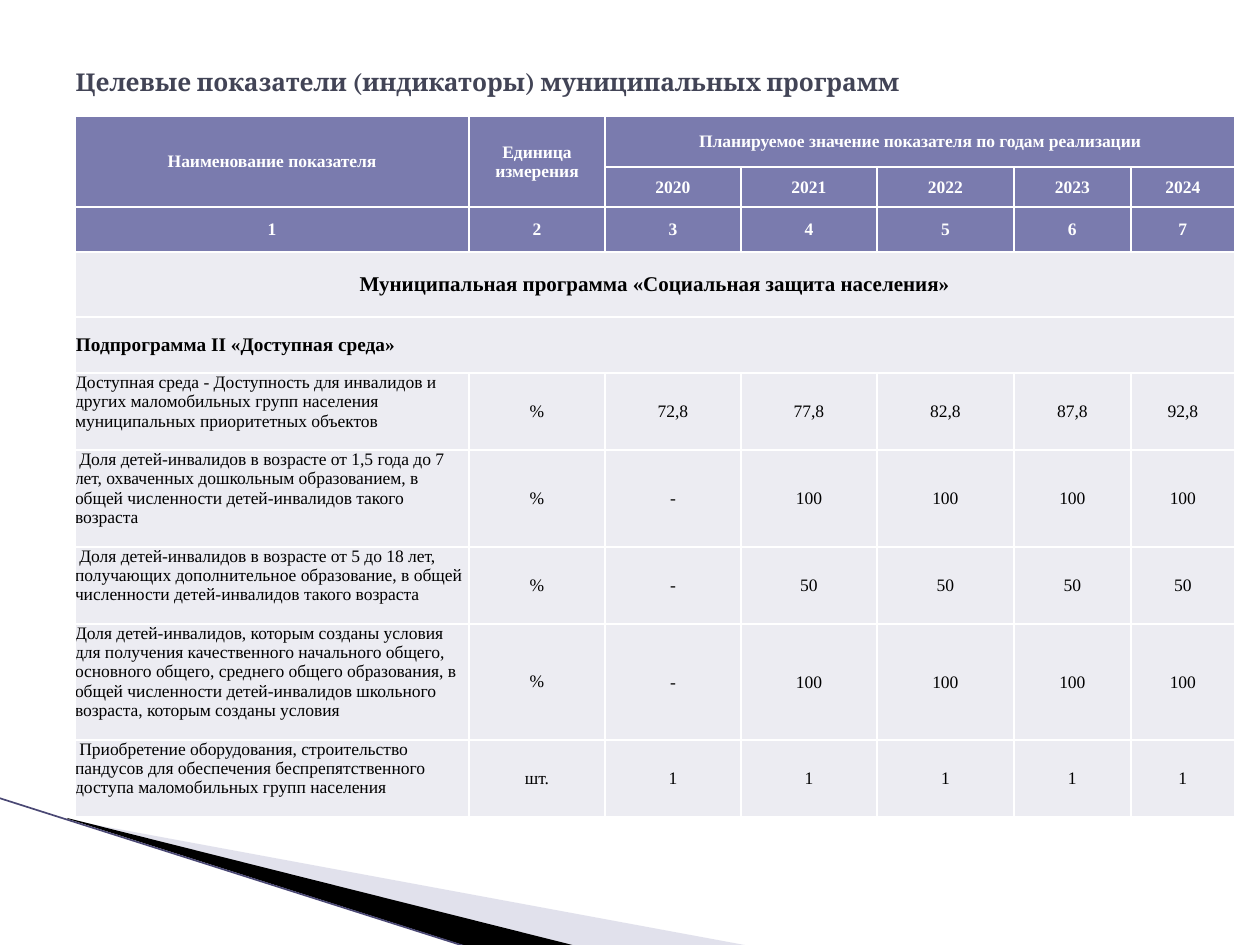
from lxml.etree import SubElement
from pptx import Presentation
from pptx.dml.color import RGBColor
from pptx.enum.shapes import MSO_CONNECTOR
from pptx.enum.text import MSO_ANCHOR, PP_ALIGN
from pptx.oxml import parse_xml
from pptx.oxml.ns import nsdecls, qn
from pptx.util import Pt

PX = 914400 // 126  # EMU in one px

WHITE = RGBColor(0xFF, 0xFF, 0xFF)
BLACK = RGBColor(0x00, 0x00, 0x00)
TITLE_COLOR = RGBColor(0x42, 0x44, 0x56)
HEADER_FILL = RGBColor(0x7A, 0x7B, 0xAE)
BODY_FILL = RGBColor(0xEC, 0xEC, 0xF2)
WEDGE_FILL = RGBColor(0xB6, 0xB6, 0xD1)
EDGE_COLOR = RGBColor(0x4A, 0x48, 0x74)

HEADER_ROWS = 3
SECTION_ROWS = 2
COLUMN_WIDTHS = [394, 136, 136, 136, 137, 117, 104]
ROW_HEIGHTS = [51, 40, 45, 65, 56, 77, 97, 77, 116, 77]
# Merged areas: first row, first column, last row, last column
MERGES = [(0, 0, 1, 0), (0, 1, 1, 1), (0, 2, 0, 6), (3, 0, 3, 6), (4, 0, 4, 6)]

ROWS = [
    ["Наименование показателя", "Единица измерения",
     "Планируемое значение показателя по годам реализации"],
    ["", "", "2020", "2021", "2022", "2023", "2024"],
    ["1", "2", "3", "4", "5", "6", "7"],
    ["Муниципальная программа «Социальная защита населения»"],
    ["Подпрограмма II «Доступная среда»"],
    ["Доступная среда - Доступность для инвалидов и других маломобильных групп "
     "населения муниципальных приоритетных объектов",
     "%", "72,8", "77,8", "82,8", "87,8", "92,8"],
    [" Доля детей-инвалидов в возрасте от 1,5 года до 7 лет, охваченных дошкольным "
     "образованием, в общей численности детей-инвалидов такого возраста",
     "%", "-", "100", "100", "100", "100"],
    [" Доля детей-инвалидов в возрасте от 5 до 18 лет, получающих дополнительное "
     "образование, в общей численности детей-инвалидов такого возраста",
     "%", "-", "50", "50", "50", "50"],
    ["Доля детей-инвалидов, которым созданы условия для получения качественного "
     "начального общего, основного общего, среднего общего образования, в общей "
     "численности детей-инвалидов школьного возраста, которым созданы условия",
     "%", "-", "100", "100", "100", "100"],
    [" Приобретение оборудования, строительство пандусов для обеспечения "
     "беспрепятственного доступа маломобильных групп населения",
     "шт.", "1", "1", "1", "1", "1"],
]


def set_font(para, name, size, color, bold):
    para.font.name = name
    para.font.size = Pt(size)
    para.font.color.rgb = color
    para.font.bold = bold


def add_wedge(page, points, color, alpha=None):
    builder = page.shapes.build_freeform(*points[0], scale=PX)
    builder.add_line_segments(points[1:], close=True)
    wedge = builder.convert_to_shape()
    wedge.shadow.inherit = False
    wedge.fill.solid()
    wedge.fill.fore_color.rgb = color
    wedge.line.fill.background()
    if alpha is not None:
        tint = wedge.fill._xPr.find(qn("a:solidFill"))[0]
        SubElement(tint, qn("a:alpha"), val=str(alpha * 1000))


def add_edge(page, start, end):
    ends = [value * PX for value in (*start, *end)]
    edge = page.shapes.add_connector(MSO_CONNECTOR.STRAIGHT, *ends)
    edge.line.color.rgb = EDGE_COLOR
    edge.line.width = Pt(0.95)
    SubElement(edge._element.spPr, qn("a:effectLst"))


def set_title(page, text):
    title = page.shapes.title
    title.left, title.top, title.width, title.height = (
        value * PX for value in (63, 38, 1134, 87))
    frame = title.text_frame
    frame.text = text
    frame.vertical_anchor = MSO_ANCHOR.MIDDLE
    para = frame.paragraphs[0]
    para.alignment = PP_ALIGN.LEFT
    set_font(para, "Cambria", 14, TITLE_COLOR, True)


def add_borders(cell):
    properties = cell._tc.get_or_add_tcPr()
    for side in ("lnL", "lnR", "lnT", "lnB"):
        properties.append(parse_xml(
            f'<a:{side} {nsdecls("a")} w="{Pt(1)}"><a:solidFill>'
            f'<a:srgbClr val="{WHITE}"/></a:solidFill></a:{side}>'))


def format_cell(cell, row, column):
    is_header = row < HEADER_ROWS
    is_body = row >= HEADER_ROWS + SECTION_ROWS
    is_name = is_body and column == 0
    add_borders(cell)
    cell.fill.solid()
    cell.fill.fore_color.rgb = HEADER_FILL if is_header else BODY_FILL
    inset = 0 if is_body and column < 2 else PX
    cell.margin_left = cell.margin_right = cell.margin_top = inset
    cell.margin_bottom = 0
    cell.vertical_anchor = MSO_ANCHOR.TOP if is_name else MSO_ANCHOR.MIDDLE
    para = cell.text_frame.paragraphs[0]
    is_left = is_name or row == HEADER_ROWS + 1
    para.alignment = PP_ALIGN.LEFT if is_left else PP_ALIGN.CENTER
    size = {HEADER_ROWS: 12, HEADER_ROWS + 1: 11}.get(row, 10)
    color = WHITE if is_header else BLACK
    set_font(para, "Times New Roman", size, color, not is_body)


def add_indicator_table(page, left, top):
    width, height = sum(COLUMN_WIDTHS), sum(ROW_HEIGHTS)
    table = page.shapes.add_table(
        len(ROW_HEIGHTS), len(COLUMN_WIDTHS),
        left * PX, top * PX, width * PX, height * PX).table
    table.horz_banding = False
    for column, size in zip(table.columns, COLUMN_WIDTHS):
        column.width = size * PX
    for row, size in zip(table.rows, ROW_HEIGHTS):
        row.height = size * PX
    for row, texts in enumerate(ROWS):
        for column, text in enumerate(texts):
            table.cell(row, column).text = text
    for row in range(len(ROW_HEIGHTS)):
        for column in range(len(COLUMN_WIDTHS)):
            format_cell(table.cell(row, column), row, column)
    for first_row, first_column, last_row, last_column in MERGES:
        table.cell(first_row, first_column).merge(table.cell(last_row, last_column))


def main():
    deck = Presentation()
    deck.slide_width, deck.slide_height = 1260 * PX, 945 * PX
    page = deck.slides.add_slide(deck.slide_layouts[5])

    # Corner decoration
    add_wedge(page, [(69, 820), (750, 946), (575, 946), (69, 819)], WEDGE_FILL, alpha=40)
    add_wedge(page, [(67, 818), (576, 946), (469, 947), (68, 819)], BLACK)
    add_edge(page, (-1, 798), (467, 947))

    # Heading and indicators
    set_title(page, "Целевые показатели (индикаторы) муниципальных программ")
    add_indicator_table(page, 75, 116)

    deck.save("out.pptx")


if __name__ == "__main__":
    main()
